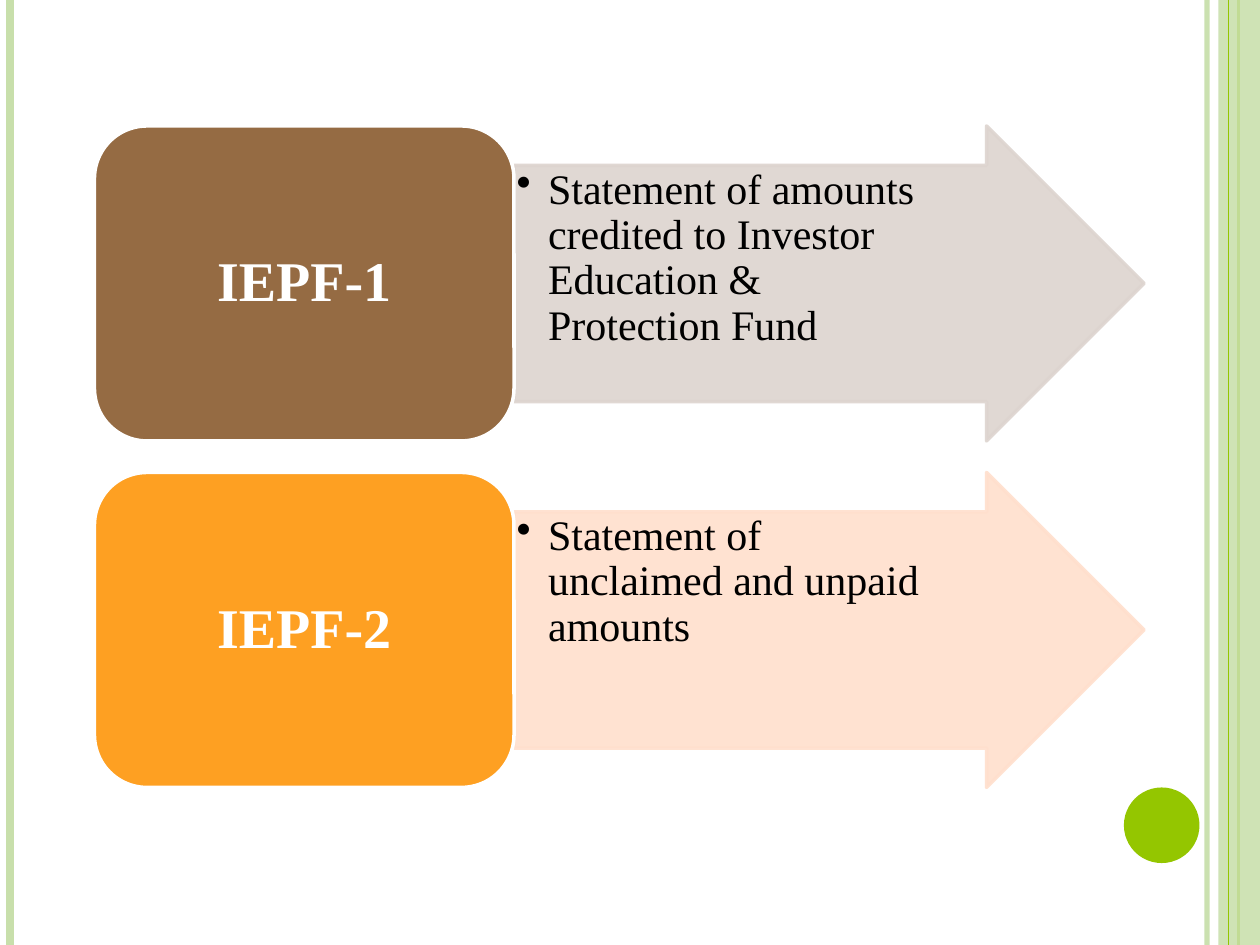
from dataclasses import dataclass

from lxml import etree
from pptx import Presentation
from pptx.dml.color import RGBColor
from pptx.enum.shapes import MSO_CONNECTOR, MSO_SHAPE
from pptx.enum.text import MSO_ANCHOR, PP_ALIGN
from pptx.oxml.ns import qn
from pptx.util import Emu, Pt

PX = 9144  # EMU per px, 100 px to the inch
WIDTH, HEIGHT = 1000, 750
FONT = "Times New Roman"
GREEN, PALE_GREEN = "94C600", "C8DFAB"
WHITE, BLACK = "FFFFFF", "000000"

STRAIGHT = MSO_CONNECTOR.STRAIGHT
RECTANGLE, ROUNDED, ARROW, OVAL = (
    MSO_SHAPE.RECTANGLE, MSO_SHAPE.ROUNDED_RECTANGLE,
    MSO_SHAPE.RIGHT_ARROW, MSO_SHAPE.OVAL)
LEFT, CENTER = PP_ALIGN.LEFT, PP_ALIGN.CENTER
TOP, MIDDLE = MSO_ANCHOR.TOP, MSO_ANCHOR.MIDDLE

# Form rows: label box on the left, arrow with its purpose on the right
BOX_LEFT, BOX_WIDTH, ARROW_WIDTH = 75, 333, 500
ROW_TOP, ROW_HEIGHT, ROW_STEP = 100, 250, 275


@dataclass
class Stripe:
    x: int
    color: str
    weight: float
    opacity: int = 100


@dataclass
class FormRow:
    label: str
    purpose: str
    box_color: str
    arrow_color: str


STRIPES_BELOW_BAND = [
    Stripe(958, PALE_GREEN, 3, 93),
    Stripe(8, PALE_GREEN, 4.5),
    Stripe(983, GREEN, 1.5),
]
STRIPE_ABOVE_BAND = Stripe(975, GREEN, 0.75)

FORM_ROWS = [
    FormRow("IEPF-1",
            "Statement of amounts credited to Investor Education & Protection Fund",
            "956B43", "DDD4CF"),
    FormRow("IEPF-2", "Statement of unclaimed and unpaid amounts",
            "FEA022", "FFDFCD"),
]


def px(value: int) -> Emu:
    return Emu(value * PX)


def paint(fill, color: str, opacity: int = 100) -> None:
    """Give a fill a solid colour with an opacity in percent."""
    fill.solid()
    fill.fore_color.rgb = RGBColor.from_string(color)
    if opacity < 100:
        color_element = fill._xPr.find(qn("a:solidFill"))[0]
        etree.SubElement(color_element, qn("a:alpha"), val=str(opacity * 1000))


def add_stripe(slide, stripe: Stripe) -> None:
    line = slide.shapes.add_connector(
        STRAIGHT, px(stripe.x), 0, px(stripe.x), px(HEIGHT))
    line.line.width = Pt(stripe.weight)
    paint(line.line.fill, stripe.color, stripe.opacity)
    etree.SubElement(line._element.spPr, qn("a:effectLst"))


def add_shape(slide, kind, left: int, top: int, width: int, height: int,
              color: str, opacity: int = 100, outline: str = ""):
    shape = slide.shapes.add_shape(kind, px(left), px(top), px(width), px(height))
    shape.shadow.inherit = False
    paint(shape.fill, color, opacity)
    if outline:
        shape.line.width = Pt(2)
        paint(shape.line.fill, outline, opacity)
    else:
        shape.line.fill.background()
    return shape


def write(shape, text: str, *, size: int, color: str, margins: tuple,
          bold: bool = False, align=LEFT, anchor=TOP, bullet: bool = False) -> None:
    frame = shape.text_frame
    frame.word_wrap = True
    frame.vertical_anchor = anchor
    (frame.margin_left, frame.margin_top,
     frame.margin_right, frame.margin_bottom) = map(px, margins)
    paragraph = frame.paragraphs[0]
    paragraph.alignment = align
    paragraph.line_spacing = 0.9
    run = paragraph.add_run()
    run.text = text
    run.font.name = FONT
    run.font.size = Pt(size)
    run.font.bold = bold
    run.font.color.rgb = RGBColor.from_string(color)
    if bullet:
        properties = paragraph._p.get_or_add_pPr()
        properties.set("marL", str(px(25)))
        properties.set("indent", str(px(-25)))
        etree.SubElement(properties, qn("a:buChar"), char="•")


def add_form_row(slide, row: FormRow, top: int) -> None:
    arrow = add_shape(slide, ARROW, BOX_LEFT + BOX_WIDTH, top, ARROW_WIDTH,
                      ROW_HEIGHT, row.arrow_color, 90, row.arrow_color)
    arrow.adjustments[0] = 0.75
    arrow.adjustments[1] = 0.5
    # The wide right margin keeps the text out of the arrow's tip
    write(arrow, row.purpose, size=24, color=BLACK,
          margins=(2, 2, 65, 2), bullet=True)

    box = add_shape(slide, ROUNDED, BOX_LEFT, top, BOX_WIDTH, ROW_HEIGHT,
                    row.box_color, outline=WHITE)
    write(box, row.label, size=32, color=WHITE, margins=(13, 7, 13, 7),
          bold=True, align=CENTER, anchor=MIDDLE)


def main() -> None:
    presentation = Presentation()
    presentation.slide_width, presentation.slide_height = px(WIDTH), px(HEIGHT)
    slide = presentation.slides.add_slide(presentation.slide_layouts[6])

    # Side stripes, band and dot
    for stripe in STRIPES_BELOW_BAND:
        add_stripe(slide, stripe)
    add_shape(slide, RECTANGLE, 967, 0, 33, HEIGHT, PALE_GREEN, 87)
    add_stripe(slide, STRIPE_ABOVE_BAND)
    add_shape(slide, OVAL, 892, 625, 60, 60, GREEN)

    # Form rows
    for index, row in enumerate(FORM_ROWS):
        add_form_row(slide, row, ROW_TOP + index * ROW_STEP)

    presentation.save("out.pptx")


if __name__ == "__main__":
    main()
